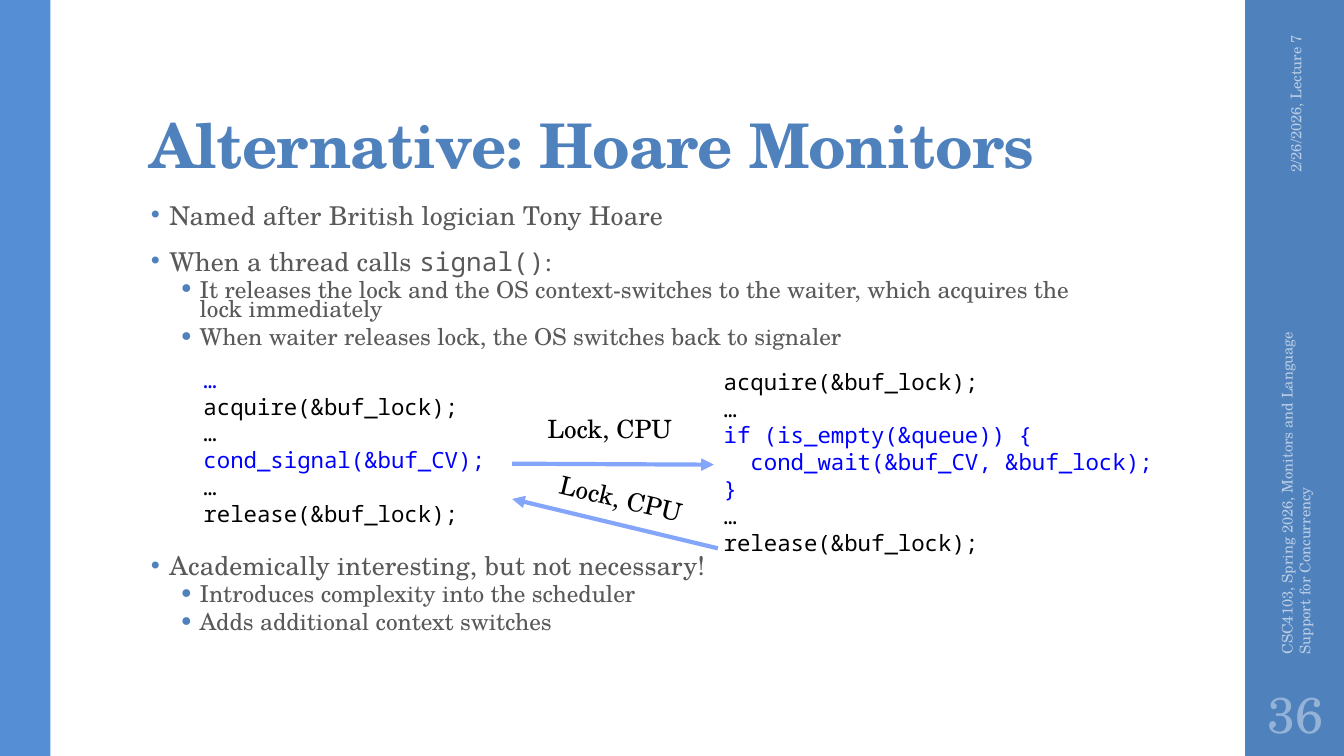
from lxml import etree
from pptx import Presentation
from pptx.dml.color import RGBColor
from pptx.enum import shapes, text
from pptx.oxml import ns
from pptx.util import Inches, Pt

BLUE = RGBColor(0x4F, 0x81, 0xBD)
LEFT_BAND = RGBColor(0x55, 0x8E, 0xD5)
GRAY = RGBColor(0x59, 0x59, 0x59)
PALE = RGBColor(0xB9, 0xCD, 0xE5)
NUMBER_BLUE = RGBColor(0x95, 0xB3, 0xD7)
CODE_BLUE = RGBColor(0x00, 0x00, 0xFF)
BLACK = RGBColor(0x00, 0x00, 0x00)
ARROW_BLUE = RGBColor(0x83, 0xA6, 0xFA)
SERIF = "TeX Gyre Schola"
MONO = "Noto Sans Mono"


def write(para, words, size, color, font=SERIF, bold=False, tracking=0):
    """Add a run to the paragraph; tracking is in hundredths of a point."""
    span = para.add_run()
    span.text = words
    span.font.size = Pt(size)
    span.font.name = font
    span.font.bold = bold
    span.font.color.rgb = color
    if tracking:
        span.font._element.set("spc", str(tracking))


def add_box(left, top, width, height, rotation=0, anchor=text.MSO_ANCHOR.TOP):
    box = page.shapes.add_textbox(Inches(left), Inches(top), Inches(width), Inches(height))
    box.rotation = rotation
    box.text_frame.word_wrap = True
    box.text_frame.vertical_anchor = anchor
    return box.text_frame


deck = Presentation()
deck.slide_width, deck.slide_height = Inches(13.33), Inches(7.5)
page = deck.slides.add_slide(deck.slide_layouts[1])

# Side bands
for left, width, color in [(12.35, 0.98, BLUE), (0, 0.5, LEFT_BAND)]:
    band = page.shapes.add_shape(shapes.MSO_SHAPE.RECTANGLE, Inches(left), 0,
                                 Inches(width), deck.slide_height)
    band.shadow.inherit = False
    band.fill.solid()
    band.fill.fore_color.rgb = color
    band.line.fill.background()

# Title and body
title, body = page.placeholders
for holder, (left, top, width, height), anchor in [
    (title, (1.38, 0.32, 10.6, 1.53), text.MSO_ANCHOR.BOTTOM),
    (body, (1.38, 2, 9.4, 4.76), text.MSO_ANCHOR.TOP),
]:
    holder.left, holder.top = Inches(left), Inches(top)
    holder.width, holder.height = Inches(width), Inches(height)
    holder.text_frame.word_wrap = True
    holder.text_frame.auto_size = text.MSO_AUTO_SIZE.NONE
    holder.text_frame.vertical_anchor = anchor

title.text_frame.margin_top = Inches(0.03)
heading = title.text_frame.paragraphs[0]
heading.alignment = text.PP_ALIGN.LEFT
heading.line_spacing = 0.9
write(heading, "Alternative: Hoare Monitors", 44, BLUE, bold=True, tracking=-50)

CODE_GAP = 145  # points left free for the two code listings
points = [
    (0, 0, [("Named after British logician Tony Hoare", SERIF)]),
    (0, 14, [("When a thread calls ", SERIF), ("signal()", MONO), (":", SERIF)]),
    (1, 3, [("It releases the lock and the OS context-switches to the waiter, "
             "which acquires the lock immediately", SERIF)]),
    (1, 3, [("When waiter releases lock, the OS switches back to signaler", SERIF)]),
    (0, CODE_GAP, [("Academically interesting, but not necessary!", SERIF)]),
    (1, 3, [("Introduces complexity into the scheduler", SERIF)]),
    (1, 3, [("Adds additional context switches", SERIF)]),
]
for index, (level, before, pieces) in enumerate(points):
    para = body.text_frame.add_paragraph() if index else body.text_frame.paragraphs[0]
    para.level = level
    props = para._p.get_or_add_pPr()
    props.set("marL", str(Inches((0.2, 0.5)[level])))
    props.set("indent", str(Inches(-0.2)))
    bullet_color = etree.SubElement(props, ns.qn("a:buClr"))
    etree.SubElement(bullet_color, ns.qn("a:srgbClr"), val=str(BLUE))
    etree.SubElement(props, ns.qn("a:buSzPct"), val=("80000", "100000")[level])
    etree.SubElement(props, ns.qn("a:buFont"), typeface=SERIF)
    etree.SubElement(props, ns.qn("a:buChar"), char="•")
    para.line_spacing = (0.75, 0.7)[level]
    para.space_before = Pt(before)
    para.space_after = Pt((2, 3)[level])
    for words, font in pieces:
        write(para, words, (18.5, 16.6)[level], GRAY, font, tracking=(10, 0)[level])

# Date, footer and slide number
middle = text.MSO_ANCHOR.MIDDLE
date = add_box(11.81, 1.09, 2.08, 0.4, 270, middle).paragraphs[0]
date.alignment = text.PP_ALIGN.RIGHT
write(date, "2/26/2026, Lecture 7", 10.5, PALE)
footer = add_box(10.89, 4.43, 3.92, 0.4, 270, middle).paragraphs[0]
write(footer, "CSC4103, Spring 2026, Monitors and Language Support for Concurrency", 10.5, PALE)
number_frame = add_box(12.35, 6.75, 1, 0.65, anchor=middle)
number_frame.margin_left = number_frame.margin_right = Inches(0.05)
number = number_frame.paragraphs[0]
number.alignment = text.PP_ALIGN.CENTER
write(number, "36", 36, NUMBER_BLUE)

# Code of the waiter and of the signaler
waiter = [
    ("acquire(&buf_lock);", BLACK),
    ("…", BLACK),
    ("if (is_empty(&queue)) {", CODE_BLUE),
    ("  cond_wait(&buf_CV, &buf_lock);", CODE_BLUE),
    ("}", CODE_BLUE),
    ("…", BLACK),
    ("release(&buf_lock);", BLACK),
]
signaler = [
    ("…", CODE_BLUE),
    ("acquire(&buf_lock);", BLACK),
    ("…", BLACK),
    ("cond_signal(&buf_CV);", CODE_BLUE),
    ("…", BLACK),
    ("release(&buf_lock);", BLACK),
]
for listing, place in [(waiter, (7.08, 3.6, 4.83, 2.02)), (signaler, (1.92, 3.58, 3.83, 1.72))]:
    frame = add_box(*place)
    for index, (code, color) in enumerate(listing):
        para = frame.add_paragraph() if index else frame.paragraphs[0]
        write(para, code, 16, color, MONO)

# Hand-over arrows with their labels
for ends, label_place in [
    ((5.08, 4.6, 7.08, 4.61), (5.33, 4.05, 1.67, 0.4, 0)),
    ((7.12, 5.44, 5.08, 4.95), (5.44, 4.76, 1.57, 0.4, 13.5)),
]:
    arrow = page.shapes.add_connector(shapes.MSO_CONNECTOR.STRAIGHT, *map(Inches, ends))
    arrow.line.color.rgb = ARROW_BLUE
    arrow.line.width = Pt(3)
    etree.SubElement(arrow.line._get_or_add_ln(), ns.qn("a:tailEnd"), type="triangle")
    etree.SubElement(arrow._element.spPr, ns.qn("a:effectLst"))
    write(add_box(*label_place).paragraphs[0], "Lock, CPU", 18, BLACK)

deck.save("out.pptx")
